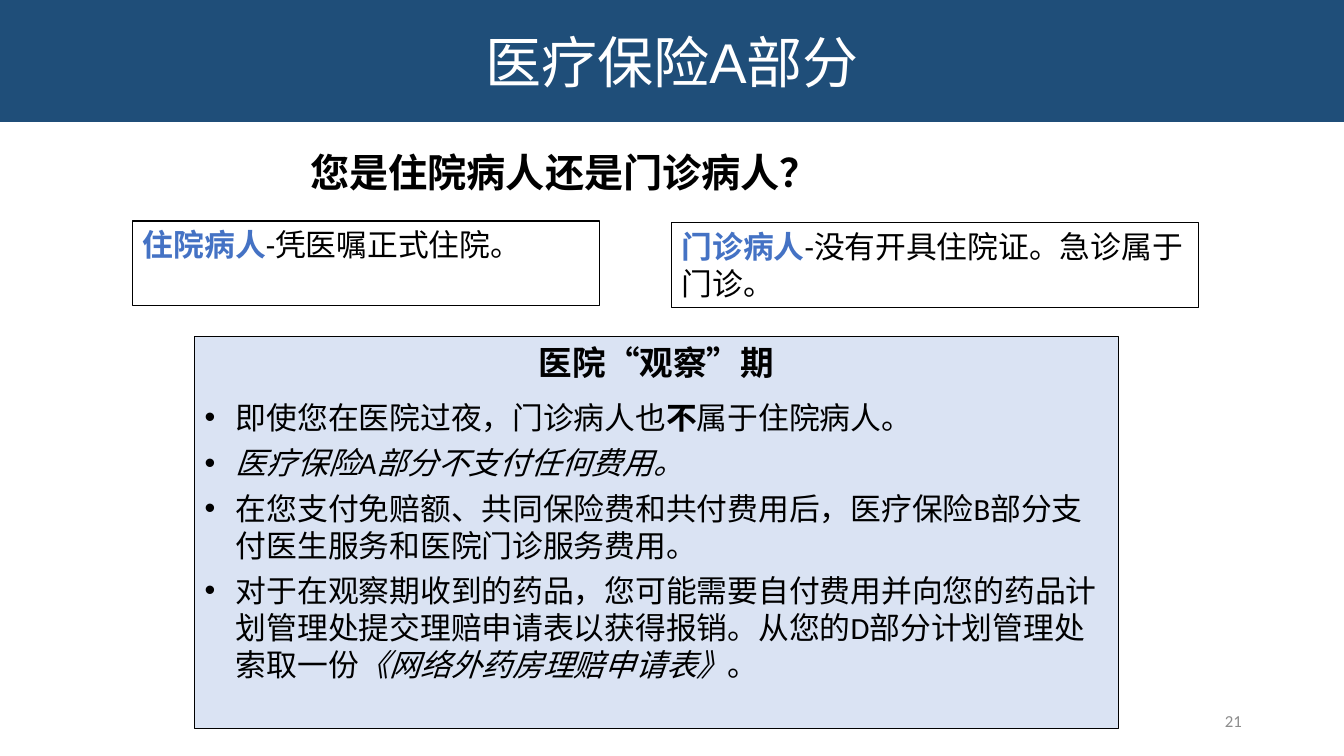
"""Build the slide comparing inpatients and outpatients under Part A."""
from lxml.etree import SubElement
from pptx import Presentation
from pptx.dml.color import RGBColor
from pptx.enum.text import MSO_ANCHOR, MSO_AUTO_SIZE, PP_ALIGN
from pptx.oxml.ns import qn
from pptx.util import Cm, Pt

COLORS = {
    "banner": "1F4E79",
    "panel": "DAE3F3",
    "term": "4472C4",
    "text": "000000",
    "white": "FFFFFF",
    "number": "8C8C8C",
}


def place(box, left, top, width, height, anchor=MSO_ANCHOR.TOP):
    """Position a box in centimetres and return its text frame."""
    box.left, box.top, box.width, box.height = Cm(left), Cm(top), Cm(width), Cm(height)
    frame = box.text_frame
    frame.word_wrap = True
    frame.auto_size = MSO_AUTO_SIZE.NONE
    frame.vertical_anchor = anchor
    return frame


def write(paragraph, text, size, color="text", bold=False, italic=False, font="Calibri"):
    """Append one formatted run to a paragraph."""
    run = paragraph.add_run()
    run.text = text
    run.font.name = font
    run.font.size = Pt(size)
    run.font.bold = bold
    run.font.italic = italic
    run.font.color.rgb = RGBColor.from_string(COLORS[color])


presentation = Presentation()
presentation.slide_width = Cm(33.87)
presentation.slide_height = Cm(19.05)
slide = presentation.slides.add_slide(presentation.slide_layouts[1])

banner = slide.shapes.title
banner_frame = place(banner, 0, 0, 33.87, 3.07, MSO_ANCHOR.MIDDLE)
banner.fill.solid()
banner.fill.fore_color.rgb = RGBColor.from_string(COLORS["banner"])
banner_frame.paragraphs[0].alignment = PP_ALIGN.CENTER
write(banner_frame.paragraphs[0], "医疗保险A部分", 40, "white", font="Arial")

observation = slide.placeholders[1]
observation_frame = place(observation, 4.9, 8.48, 23.29, 9.88)
observation.fill.solid()
observation.fill.fore_color.rgb = RGBColor.from_string(COLORS["panel"])
observation.line.color.rgb = RGBColor.from_string(COLORS["text"])
observation.line.width = Pt(0.75)

heading = observation_frame.paragraphs[0]
heading.alignment = PP_ALIGN.CENTER
heading.space_before = Pt(0)
heading.space_after = Pt(12)
heading_properties = heading._p.get_or_add_pPr()
heading_properties.set("marL", "0")
heading_properties.set("indent", "0")
SubElement(heading_properties, qn("a:buNone"))
write(heading, "医院“观察”期", 24, bold=True)

observation_rules = [
    [("即使您在医院过夜，门诊病人也", {}), ("不", {"bold": True}), ("属于住院病人。", {})],
    [("医疗保险A部分不支付任何费用。", {"italic": True})],
    [
        ("在您支付免赔额、共同保险费和共付费用后，"
         "医疗保险B部分支付医生服务和医院门诊服务费用", {}),
        ("。", {"font": "Arial"}),
    ],
    [
        ("对于在观察期收到的药品，您可能需要自付费用并向您的药品计划管理处"
         "提交理赔申请表以获得报销。从您的D部分计划管理处索取一份", {}),
        ("《网络外药房理赔申请表》", {"italic": True}),
        ("。", {}),
    ],
]
for rule in observation_rules:
    bullet = observation_frame.add_paragraph()
    bullet.space_before = Pt(0)
    bullet.space_after = Pt(6)
    bullet_properties = bullet._p.get_or_add_pPr()
    bullet_properties.set("marL", str(Cm(0.79)))
    bullet_properties.set("indent", str(-Cm(0.79)))
    SubElement(bullet_properties, qn("a:buFont"), typeface="Arial")
    SubElement(bullet_properties, qn("a:buChar"), char="•")
    for text, style in rule:
        write(bullet, text, 22, **style)

question = slide.shapes.add_textbox(0, 0, 0, 0)
question_frame = place(question, 7.57, 3.61, 18.72, 1.45)
write(question_frame.paragraphs[0], "您是住院病人还是门诊病人？", 28, bold=True, font="Arial")

definitions = [
    ("住院病人", "-凭医嘱正式住院。", 3.35, 5.57, 11.75),
    ("门诊病人", "-没有开具住院证。急诊属于门诊。", 16.93, 5.61, 13.28),
]
for term, meaning, left, top, width in definitions:
    definition = slide.shapes.add_textbox(0, 0, 0, 0)
    definition_frame = place(definition, left, top, width, 2.13)
    definition.line.color.rgb = RGBColor.from_string(COLORS["text"])
    definition.line.width = Pt(0.75)
    write(definition_frame.paragraphs[0], term, 22, "term", bold=True)
    write(definition_frame.paragraphs[0], meaning, 22)

page_number = slide.shapes.add_textbox(0, 0, 0, 0)
page_number_frame = place(page_number, 23.93, 17.65, 7.62, 1.02, MSO_ANCHOR.MIDDLE)
page_number_frame.paragraphs[0].alignment = PP_ALIGN.RIGHT
write(page_number_frame.paragraphs[0], "21", 12, "number")

presentation.save("out.pptx")
